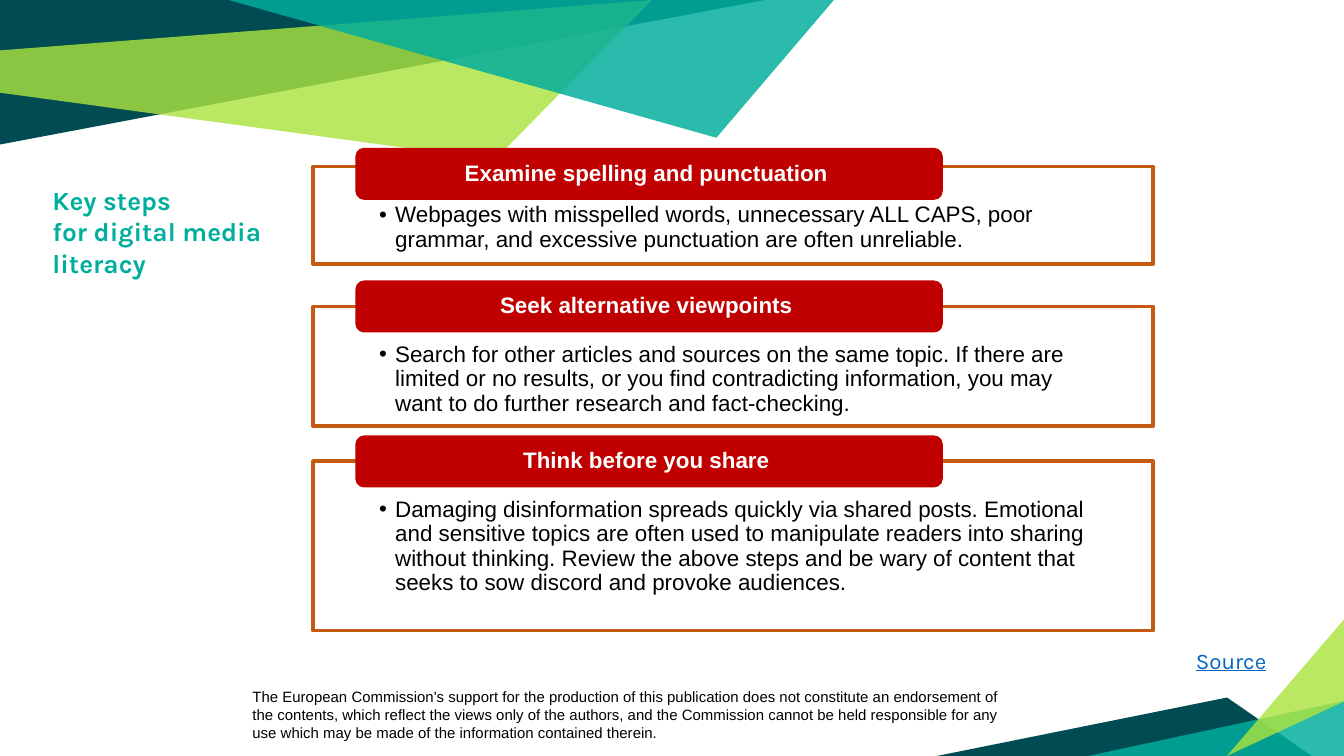
from lxml import etree
from pptx import Presentation
from pptx.dml.color import RGBColor
from pptx.enum.shapes import MSO_SHAPE
from pptx.enum.text import MSO_ANCHOR, MSO_AUTO_SIZE, PP_ALIGN
from pptx.oxml.ns import qn
from pptx.util import Inches, Pt

RECT, ROUNDED = MSO_SHAPE.RECTANGLE, MSO_SHAPE.ROUNDED_RECTANGLE
TOP, MIDDLE = MSO_ANCHOR.TOP, MSO_ANCHOR.MIDDLE
LEFT, CENTER = PP_ALIGN.LEFT, PP_ALIGN.CENTER
TITLE_ONLY = 5

THEME = {
    "dark": "004C52", "teal": "00AE9D", "lime": "ABE33F", "white": "FFFFFF",
    "black": "000000", "red": "C00000", "rust": "C55A11", "link": "0563C1",
    "text_font": "Arial", "brand_font": "Karla",
    "title_size": 14, "text_size": 12, "note_size": 8,
}

deck = Presentation()
deck.slide_width = Inches(10)
deck.slide_height = deck.slide_width * 9 // 16
COLUMN = deck.slide_width / 100
ROW = deck.slide_height / 56.25
slide = deck.slides.add_slide(deck.slide_layouts[TITLE_ONLY])


def paint(shape, color, opacity=100):
    shape.shadow.inherit = False
    shape.fill.solid()
    shape.fill.fore_color.rgb = RGBColor.from_string(THEME[color])
    shape.line.fill.background()
    if opacity < 100:
        tint = shape.fill._xPr.find(qn("a:solidFill"))[0]
        etree.SubElement(tint, qn("a:alpha"), val=str(opacity * 1000))


def write(shape, text, font, size, color, bold=False, align=LEFT, anchor=TOP,
          margins=(1, 0.5, 1, 0.5), spacing=1.0, wrap=True):
    frame = shape.text_frame
    frame.text = text
    frame.word_wrap = wrap
    frame.auto_size = MSO_AUTO_SIZE.NONE
    frame.vertical_anchor = anchor
    frame.margin_left, frame.margin_right = (int(m * COLUMN) for m in margins[::2])
    frame.margin_top, frame.margin_bottom = (int(m * ROW) for m in margins[1::2])
    for paragraph in frame.paragraphs:
        paragraph.alignment = align
        paragraph.line_spacing = spacing
        paragraph.space_before = Pt(0)
        for run in paragraph.runs:
            run.font.name = THEME[font]
            run.font.size = Pt(THEME[size])
            run.font.bold = bold
            run.font.color.rgb = RGBColor.from_string(THEME[color])


disclaimer = slide.shapes.add_textbox(
    int(17.8 * COLUMN), int(50.7 * ROW), int(57.9 * COLUMN), int(5 * ROW))
write(disclaimer, "The European Commission's support for the production of this "
      "publication does not constitute an endorsement of the contents, which reflect "
      "the views only of the authors, and the Commission cannot be held responsible "
      "for any use which may be made of the information contained therein.",
      "text_font", "note_size", "black")

facets = [
    ("dark", 100, [(0, 0), (0, 10.75), (56.9, 0)]),
    ("lime", 81, [(0, 3.75), (0, 6.9), (36.8, 11.9), (48.5, 0)]),
    ("dark", 100, [(69.7, 56.25), (97.6, 56.25), (91.3, 51.9)]),
    ("teal", 83, [(100, 52.15), (100, 56.25), (81, 56.25)]),
    ("lime", 81, [(100, 52.2), (100, 46.1), (91.3, 56.25)]),
    ("teal", 83, [(17, 0), (53.3, 10.25), (62.05, 0)]),
]
for color, opacity, corners in facets:
    points = [(int(x * COLUMN), int(y * ROW)) for x, y in corners]
    outline = slide.shapes.build_freeform(*points[0])
    outline.add_line_segments(points[1:], close=True)
    paint(outline.convert_to_shape(), color, opacity)

steps = [
    (11, 12.4, 7.25, "Examine spelling and punctuation",
     "Webpages with misspelled words, unnecessary ALL CAPS, poor grammar, and "
     "excessive punctuation are often unreliable."),
    (20.87, 22.8, 8.9, "Seek alternative viewpoints",
     "Search for other articles and sources on the same topic. If there are limited "
     "or no results, or you find contradicting information, you may want to do "
     "further research and fact-checking."),
    (32.4, 34.33, 12.6, "Think before you share",
     "Damaging disinformation spreads quickly via shared posts. Emotional and "
     "sensitive topics are often used to manipulate readers into sharing without "
     "thinking. Review the above steps and be wary of content that seeks to sow "
     "discord and provoke audiences."),
]
for heading_top, advice_top, advice_height, heading, advice in steps:
    panel = slide.shapes.add_shape(
        RECT, int(23.3 * COLUMN), int(advice_top * ROW),
        int(62.5 * COLUMN), int(advice_height * ROW))
    paint(panel, "white", 90)
    panel.line.color.rgb = RGBColor.from_string(THEME["rust"])
    panel.line.width = Pt(2)
    write(panel, advice, "text_font", "text_size", "black",
          margins=(4.9, 2.75, 4.9, 0.9), spacing=0.9)
    bullet = panel.text_frame.paragraphs[0]
    bullet.level = 1
    properties = bullet._p.get_or_add_pPr()
    properties.set("marL", str(int(1.2 * COLUMN)))
    properties.set("indent", str(int(-1.2 * COLUMN)))
    etree.SubElement(properties, qn("a:buFont"), typeface=THEME["text_font"])
    etree.SubElement(properties, qn("a:buChar"), char="•")
    bullet.font.size = Pt(THEME["text_size"])

    banner = slide.shapes.add_shape(
        ROUNDED, int(26.45 * COLUMN), int(heading_top * ROW),
        int(43.7 * COLUMN), int(3.87 * ROW))
    paint(banner, "red")
    write(banner, heading, "text_font", "text_size", "white", bold=True,
          align=CENTER, anchor=MIDDLE, margins=(1.8, 0, 2.2, 0), spacing=0.9)

title = slide.shapes.title
title.left, title.top = int(2.9 * COLUMN), int(13.2 * ROW)
title.width, title.height = int(22.8 * COLUMN), int(10.4 * ROW)
write(title, "Key steps\nfor digital media literacy",
      "brand_font", "title_size", "teal", bold=True)

source = slide.shapes.add_textbox(
    int(88 * COLUMN), int(47.65 * ROW), int(7.3 * COLUMN), int(3 * ROW))
write(source, "Source", "brand_font", "text_size", "link", wrap=False)
source.text_frame.paragraphs[0].runs[0].font.underline = True

deck.save("out.pptx")
